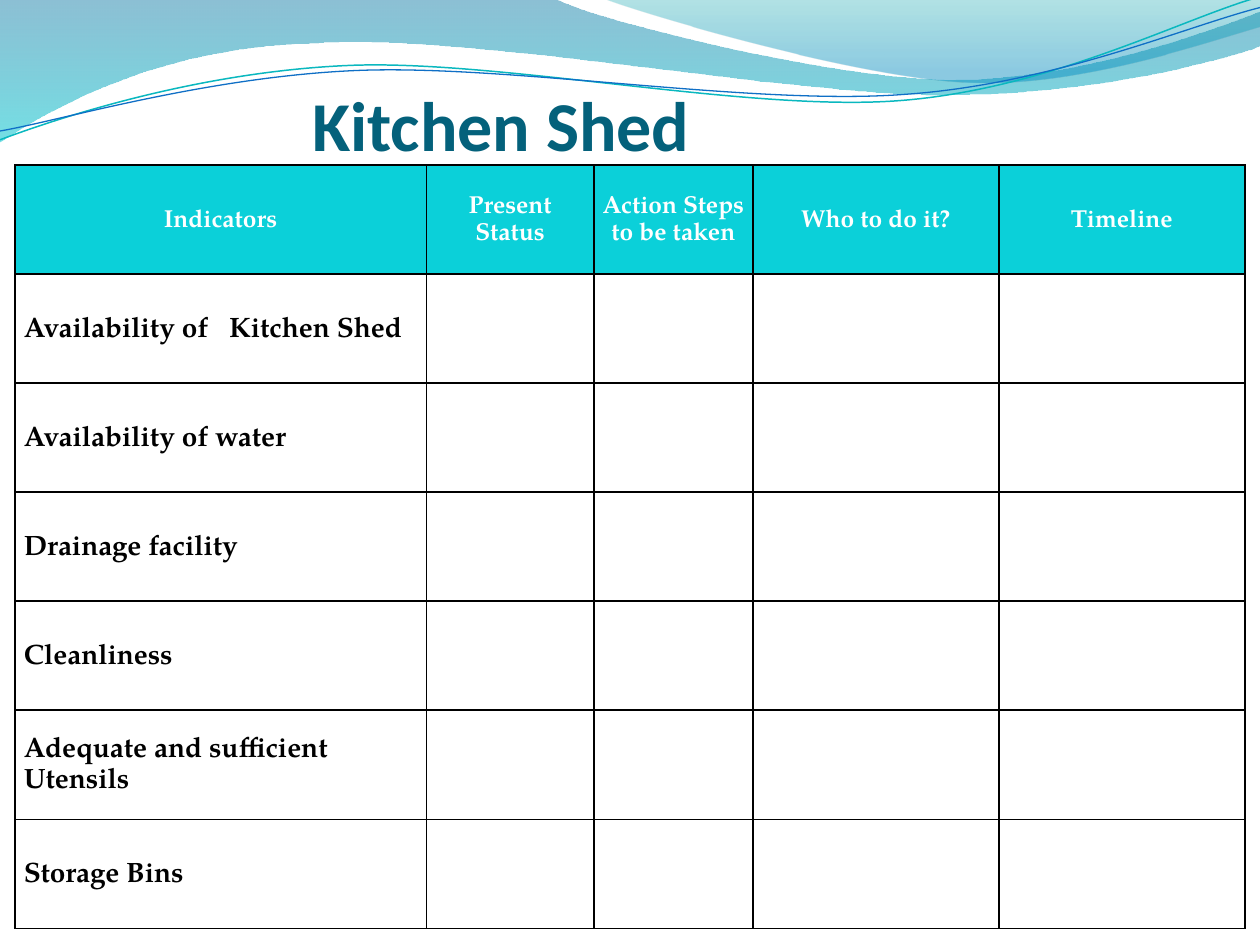
from dataclasses import dataclass

import lxml.etree
import pptx
import pptx.dml.color
import pptx.enum.text
import pptx.oxml.ns
import pptx.util

GRID_COLUMNS, GRID_ROWS = 1000, 750


@dataclass(frozen=True)
class Theme:
    heading_font: str = "Calibri"
    table_font: str = "TeX Gyre Pagella"
    heading_size: int = 40
    header_size: int = 14
    indicator_size: int = 16
    border_width: float = 1
    heading: str = "04617B"
    header_fill: str = "0BD0D9"
    header_text: str = "FFFFFF"
    ink: str = "000000"
    wide_wave: tuple = ((0, "0074A1", 45), (1, "00C6CF", 55))
    corner_wave: tuple = ((0, "00A1A9", 30), (0.8, "008BBF", 45))
    teal_strand: tuple = ("0AB8BF", 0.85)
    blue_strand: tuple = ("0F6FC6", 0.75)


@dataclass(frozen=True)
class Box:
    left: int
    top: int
    width: int
    height: int


THEME = Theme()

WIDE_WAVE = [
    (0, 0), (440, -1), (476, 17, 664, 63, 758, 63), (853, 63, 958, 26, 1000, 9),
    (1001, 36), (983, 44, 870, 76, 746, 75), (622, 75, 382, 28, 257, 34),
    (129, 36, 46, 83, -1, 113), (0, 0),
]
CORNER_WAVE = [
    (479, -1), (509, 11, 682, 62, 769, 65), (856, 69, 961, 32, 1000, 21),
    (1000, 0), (479, -1),
]
TEAL_STRAND = [
    (0, 111), (48, 93, 158, 57, 277, 52), (395, 47, 593, 89, 713, 80),
    (833, 71, 938, 15, 998, -2),
]
BLUE_STRAND = [
    (0, 104), (47, 96, 164, 61, 283, 56), (403, 51, 597, 84, 717, 75),
    (836, 67, 941, 21, 1000, 6),
]

HEADERS = ["Indicators", "Present Status", "Action Steps to be taken", "Who to do it?", "Timeline"]
INDICATORS = [
    "Availability of   Kitchen Shed",
    "Availability of water",
    "Drainage facility",
    "Cleanliness",
    "Adequate and sufficient Utensils",
    "Storage Bins",
]
COLUMN_SHARES = [326, 133, 126, 195, 195]
HEADER_MARGIN, INDICATOR_MARGIN = 6, 7


def rgb(value):
    return pptx.dml.color.RGBColor.from_string(value)


def bend_segments(shape, steps):
    segments = iter(list(shape._element.spPr.iter(pptx.oxml.ns.qn("a:lnTo"))))
    for step in steps:
        group = [next(segments) for _ in range(len(step) // 2)]
        if len(group) == 1:
            continue
        curve = lxml.etree.Element(pptx.oxml.ns.qn("a:cubicBezTo"))
        group[0].addprevious(curve)
        for segment in group:
            curve.append(segment[0])
            segment.getparent().remove(segment)


def add_outline(slide, unit, box, outline, close):
    points = [
        ((box.left + step[i]) * unit, (box.top + step[i + 1]) * unit)
        for step in outline for i in range(0, len(step), 2)
    ]
    builder = slide.shapes.build_freeform(*points[0], scale=1.0)
    builder.add_line_segments(points[1:], close=close)
    shape = builder.convert_to_shape()
    bend_segments(shape, outline[1:])
    shape.shadow.inherit = False
    return shape


def add_wave(slide, unit, box, outline, stops):
    wave = add_outline(slide, unit, box, outline, close=True)
    wave.line.fill.background()
    wave.fill.gradient()
    wave.fill.gradient_angle = 270
    for stop, (position, color, _) in zip(wave.fill.gradient_stops, stops):
        stop.position = position
        stop.color.rgb = rgb(color)
    colors = wave._element.spPr.iter(pptx.oxml.ns.qn("a:srgbClr"))
    for color, (_, _, opacity) in zip(colors, stops):
        lxml.etree.SubElement(color, pptx.oxml.ns.qn("a:alpha"), val=str(opacity * 1000))


def add_strand(slide, unit, box, outline, style):
    strand = add_outline(slide, unit, box, outline, close=False)
    strand.fill.background()
    color, width = style
    strand.line.color.rgb = rgb(color)
    strand.line.width = pptx.util.Pt(width)


def add_wave_band(slide, unit, box):
    add_wave(slide, unit, box, WIDE_WAVE, THEME.wide_wave)
    add_wave(slide, unit, box, CORNER_WAVE, THEME.corner_wave)
    add_strand(slide, unit, box, TEAL_STRAND, THEME.teal_strand)
    add_strand(slide, unit, box, BLUE_STRAND, THEME.blue_strand)


def style_text(paragraph, font_name, size, color):
    for run in paragraph.runs:
        run.font.name = font_name
        run.font.size = pptx.util.Pt(size)
        run.font.bold = True
        run.font.color.rgb = rgb(color)


def add_heading(slide, unit, box):
    heading = slide.shapes.add_textbox(
        box.left * unit, box.top * unit, box.width * unit, box.height * unit
    )
    frame = heading.text_frame
    frame.word_wrap = True
    frame.vertical_anchor = pptx.enum.text.MSO_ANCHOR.BOTTOM
    frame.margin_left = frame.margin_right = frame.margin_bottom = 0
    frame.text = "Kitchen Shed"
    paragraph = frame.paragraphs[0]
    paragraph.alignment = pptx.enum.text.PP_ALIGN.CENTER
    style_text(paragraph, THEME.heading_font, THEME.heading_size, THEME.heading)


def add_borders(cell):
    properties = cell._tc.get_or_add_tcPr()
    for side in ("a:lnL", "a:lnR", "a:lnT", "a:lnB"):
        border = lxml.etree.SubElement(
            properties, pptx.oxml.ns.qn(side), w=str(pptx.util.Pt(THEME.border_width))
        )
        fill = lxml.etree.SubElement(border, pptx.oxml.ns.qn("a:solidFill"))
        lxml.etree.SubElement(fill, pptx.oxml.ns.qn("a:srgbClr"), val=THEME.ink)


def fill_cell(cell, wording, is_header, unit):
    add_borders(cell)
    cell.vertical_anchor = pptx.enum.text.MSO_ANCHOR.MIDDLE
    margin = HEADER_MARGIN if is_header else INDICATOR_MARGIN
    cell.margin_left = cell.margin_right = margin * unit
    cell.margin_top = cell.margin_bottom = 0
    cell.text_frame.text = wording
    paragraph = cell.text_frame.paragraphs[0]
    paragraph.line_spacing = 1.15
    if is_header:
        cell.fill.solid()
        cell.fill.fore_color.rgb = rgb(THEME.header_fill)
        paragraph.alignment = pptx.enum.text.PP_ALIGN.CENTER
        style_text(paragraph, THEME.table_font, THEME.header_size, THEME.header_text)
    else:
        cell.fill.background()
        style_text(paragraph, THEME.table_font, THEME.indicator_size, THEME.ink)


def add_checklist(slide, unit, box):
    blanks = [""] * (len(HEADERS) - 1)
    rows = [HEADERS] + [[indicator] + blanks for indicator in INDICATORS]
    checklist = slide.shapes.add_table(
        len(rows), len(HEADERS),
        box.left * unit, box.top * unit, box.width * unit, box.height * unit,
    ).table
    checklist.horz_banding = False
    for column, share in zip(checklist.columns, COLUMN_SHARES):
        column.width = round(box.width * unit * share / sum(COLUMN_SHARES))
    for r, row in enumerate(rows):
        checklist.rows[r].height = round(box.height * unit / len(rows))
        for c, wording in enumerate(row):
            fill_cell(checklist.cell(r, c), wording, r == 0, unit)


def main():
    deck = pptx.Presentation()
    deck.slide_width = pptx.util.Inches(10)
    deck.slide_height = pptx.util.Inches(7.5)
    unit = deck.slide_width // GRID_COLUMNS
    slide = deck.slides.add_slide(deck.slide_layouts[6])
    add_wave_band(slide, unit, Box(0, 0, GRID_COLUMNS, 113))
    add_heading(slide, unit, Box(129, 52, 537, 79))
    add_checklist(slide, unit, Box(12, 131, 976, GRID_ROWS - 144))
    deck.save("out.pptx")


if __name__ == "__main__":
    main()
